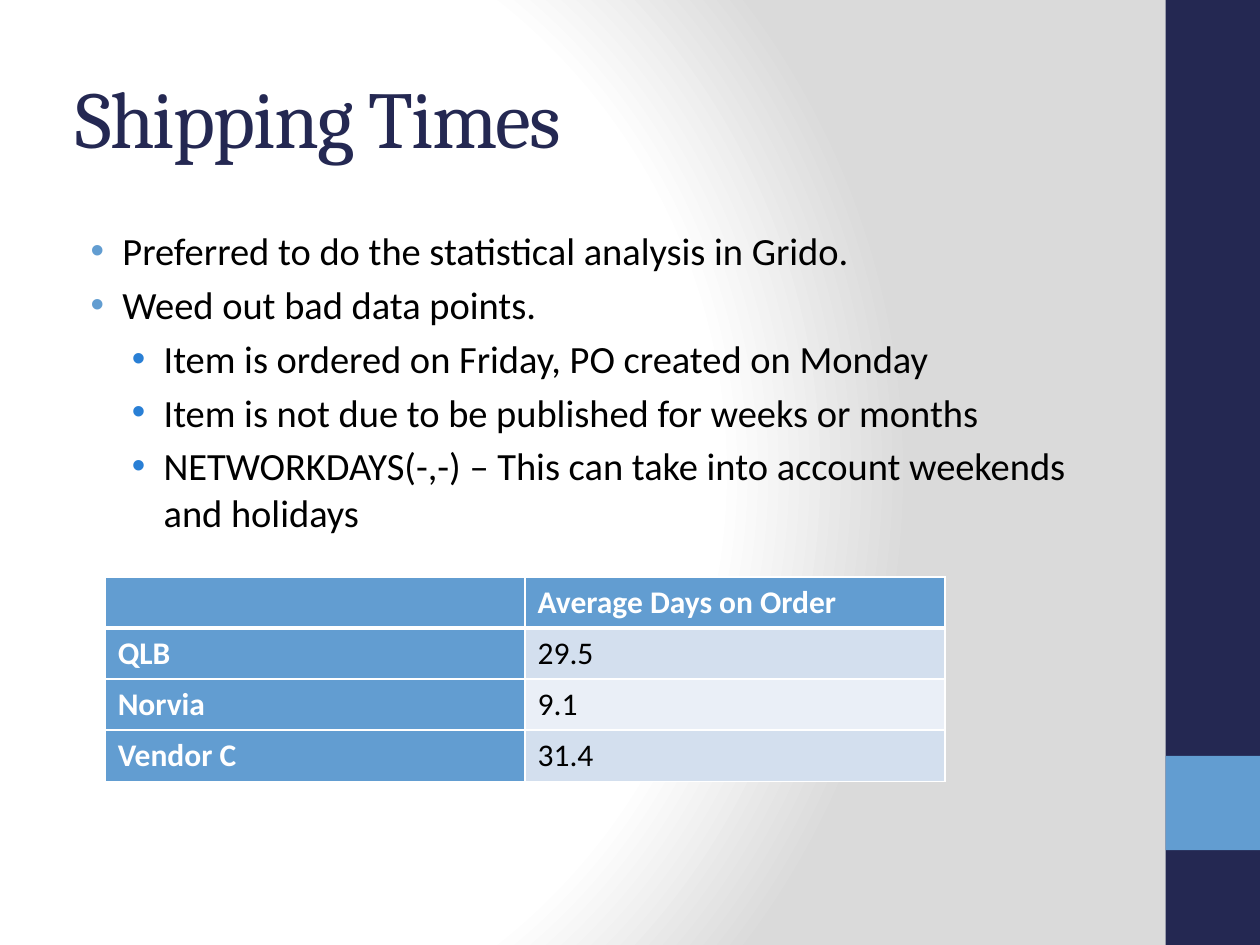
"""Build the Shipping Times slide."""
from dataclasses import dataclass

from pptx import Presentation
from pptx.dml.color import RGBColor
from pptx.enum.shapes import MSO_SHAPE
from pptx.enum.text import MSO_ANCHOR
from pptx.oxml import parse_xml
from pptx.oxml.ns import nsdecls
from pptx.util import Cm, Pt

COLORS = {"navy": "242852", "blue": "629DD1", "bright": "297FD5", "white": "FFFFFF",
          "black": "000000", "gray": "DADADA", "band": "D3DFEE", "pale": "EAEFF7"}


@dataclass
class Box:
    """Place and size in centimetres."""
    x: float
    y: float
    w: float
    h: float

    def emu(self) -> tuple:
        """Return the four lengths for python-pptx."""
        return Cm(self.x), Cm(self.y), Cm(self.w), Cm(self.h)


@dataclass
class Bullet:
    """One bulleted line and its level."""
    text: str
    level: int = 0


BARS = [(Box(23.5, 0, 1.9, 19.05), "navy"), (Box(23.5, 15.24, 1.9, 1.9), "blue")]
BULLETS = [
    Bullet("Preferred to do the statistical analysis in Grido."),
    Bullet("Weed out bad data points."),
    Bullet("Item is ordered on Friday, PO created on Monday", 1),
    Bullet("Item is not due to be published for weeks or months", 1),
    Bullet("NETWORKDAYS(-,-) – This can take into account weekends and holidays", 1),
]
LEVELS = [(0.95, "blue"), (1.78, "bright")]
HANGING = 0.64
ROWS = [("", "Average Days on Order"), ("QLB", "29.5"), ("Norvia", "9.1"), ("Vendor C", "31.4")]


def rgb(name: str) -> RGBColor:
    """Look up a colour."""
    return RGBColor.from_string(COLORS[name])


def write(p, text: str, *, size: float, color: str = "black", font: str = "Calibri",
          bold: bool = False, spacing: int = 0) -> None:
    """Add a formatted run to a paragraph."""
    r = p.add_run()
    r.text = text
    r.font.size, r.font.name, r.font.bold = Pt(size), font, bold
    r.font.color.rgb = rgb(color)
    if spacing:
        r.font._element.set("spc", str(spacing))


def set_background(s) -> None:
    """Give the slide its circular gradient."""
    s.background.fill.solid()
    bg = s.background._cSld.bg.bgPr
    stops = "".join(f'<a:gs pos="{pos}"><a:srgbClr val="{COLORS[c]}"/></a:gs>'
                    for pos, c in ((0, "white"), (75000, "white"), (100000, "gray")))
    bg.replace(bg[0], parse_xml(
        f'<a:gradFill {nsdecls("a")} rotWithShape="1"><a:gsLst>{stops}</a:gsLst>'
        '<a:path path="circle"><a:fillToRect l="20000" t="50000" r="100000" b="50000"/>'
        '</a:path></a:gradFill>'))


def add_bar(s, box: Box, color: str) -> None:
    """Draw a plain side bar."""
    sp = s.shapes.add_shape(MSO_SHAPE.RECTANGLE, *box.emu())
    sp.shadow.inherit = False
    sp.fill.solid()
    sp.fill.fore_color.rgb = rgb(color)
    sp.line.fill.background()


def add_text_frame(s, box: Box, anchor: MSO_ANCHOR):
    """Add a wrapping text box and return its frame."""
    tf = s.shapes.add_textbox(*box.emu()).text_frame
    tf.word_wrap = True
    tf.vertical_anchor = anchor
    return tf


def add_bullets(s, box: Box, bullets: list[Bullet]) -> None:
    """Write the bulleted list."""
    tf = add_text_frame(s, box, MSO_ANCHOR.TOP)
    for i, b in enumerate(bullets):
        p = tf.add_paragraph() if i else tf.paragraphs[0]
        margin, color = LEVELS[b.level]
        p.level = b.level
        p.space_before = Pt(4.4)
        pPr = p._p.get_or_add_pPr()
        pPr.set("marL", str(Cm(margin)))
        pPr.set("indent", str(-Cm(HANGING)))
        for xml in (f'<a:buClr {nsdecls("a")}><a:srgbClr val="{COLORS[color]}"/></a:buClr>',
                    f'<a:buFont {nsdecls("a")} typeface="Arial"/>',
                    f'<a:buChar {nsdecls("a")} char="•"/>'):
            pPr.append(parse_xml(xml))
        write(p, b.text, size=22)


def set_borders(cell, **widths: float) -> None:
    """Draw white cell borders of the given point widths."""
    tcPr = cell._tc.get_or_add_tcPr()
    for i, side in enumerate("LRTB"):
        tcPr.insert(i, parse_xml(
            f'<a:ln{side} {nsdecls("a")} w="{Pt(widths.get(side, 1))}"><a:solidFill>'
            f'<a:srgbClr val="{COLORS["white"]}"/></a:solidFill></a:ln{side}>'))


def add_table(s, box: Box, rows: list[tuple]) -> None:
    """Add the table with header row, header column and bands."""
    table = s.shapes.add_table(len(rows), len(rows[0]), *box.emu()).table
    for i, row in enumerate(rows):
        for j, text in enumerate(row):
            cell = table.cell(i, j)
            header = i == 0 or j == 0
            cell.fill.solid()
            cell.fill.fore_color.rgb = rgb("blue" if header else "band" if i % 2 else "pale")
            set_borders(cell, T=3 if i == 1 else 1, B=3 if i == 0 else 1)
            if text:
                write(cell.text_frame.paragraphs[0], text, size=18, bold=header,
                      color="white" if header else "black")


def main() -> None:
    """Build and save the slide."""
    prs = Presentation()
    prs.slide_width, prs.slide_height = Cm(25.4), Cm(19.05)
    s = prs.slides.add_slide(prs.slide_layouts[6])
    set_background(s)
    for box, color in BARS:
        add_bar(s, box, color)
    title = add_text_frame(s, Box(1.27, 0.76, 21.17, 3.18), MSO_ANCHOR.MIDDLE)
    write(title.paragraphs[0], "Shipping Times", size=46, color="navy", font="Cambria",
          spacing=-100)
    add_bullets(s, Box(1.27, 4.45, 21.17, 13.34), BULLETS)
    add_table(s, Box(2.12, 11.63, 16.93, 4.12), ROWS)
    prs.save("out.pptx")


if __name__ == "__main__":
    main()
